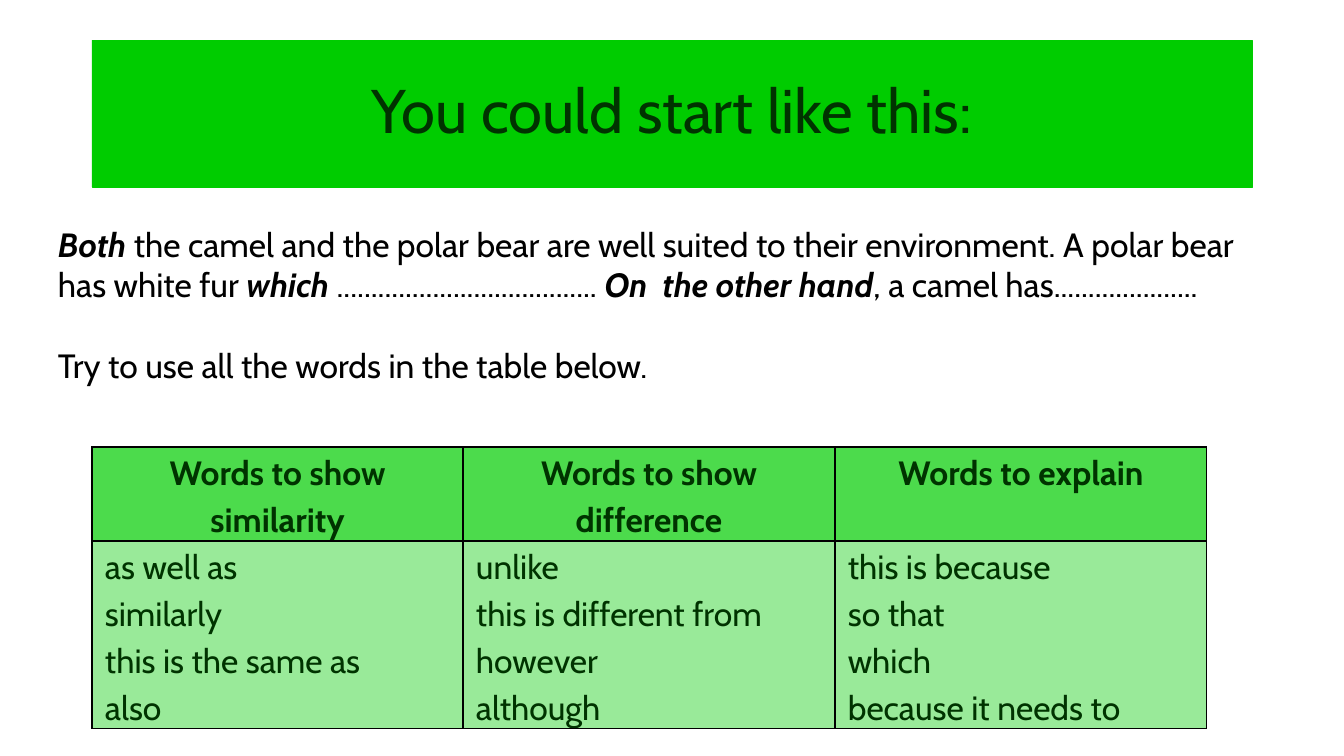
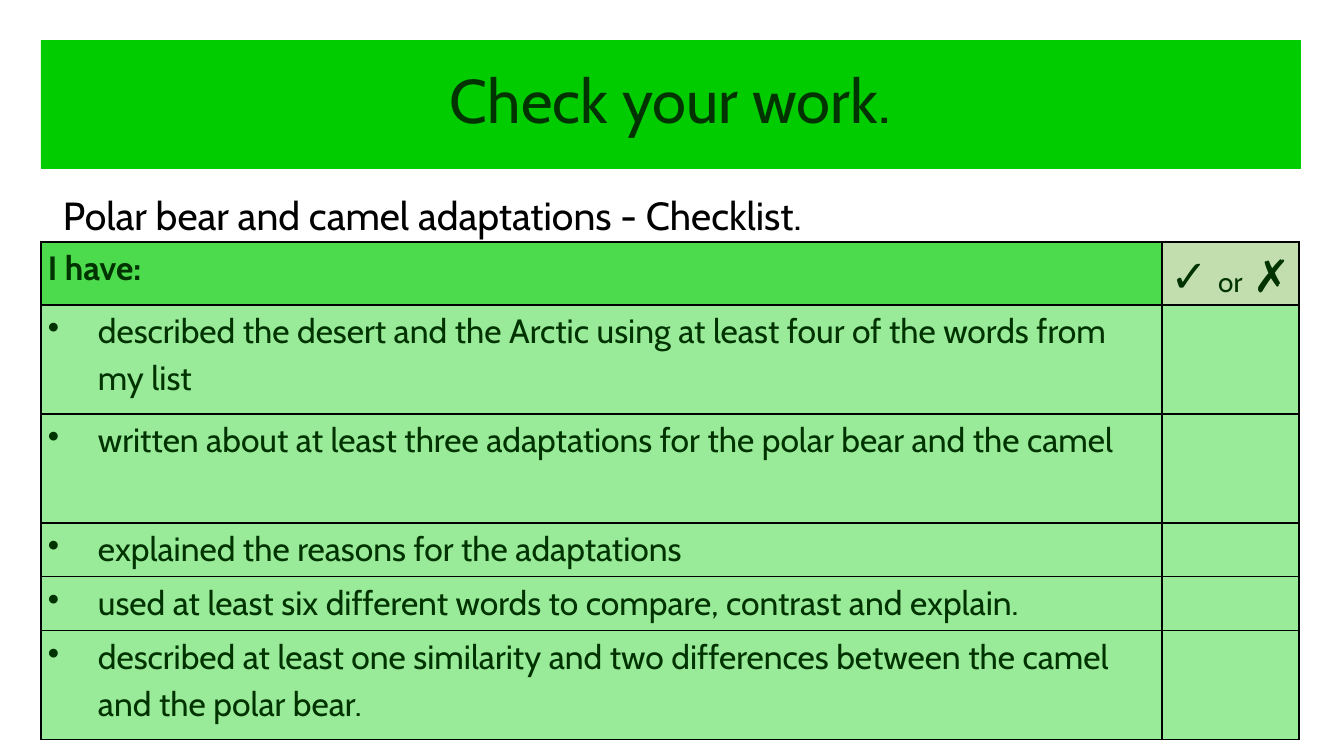
import pptx
import pptx.dml.color
import pptx.enum.text
import pptx.oxml
import pptx.oxml.ns
import pptx.util

# Shared scale, colours and text styles
PX = 914400 / 100.8
GREEN = pptx.dml.color.RGBColor(0x00, 0xCC, 0x00)
DARK_GREEN = pptx.dml.color.RGBColor(0x00, 0x33, 0x00)
SAGE = pptx.dml.color.RGBColor(0xA9, 0xD1, 0x8E)
BLACK = pptx.dml.color.RGBColor(0x00, 0x00, 0x00)
HEADER_ALPHA, BODY_ALPHA = 70, 40
CENTER = pptx.enum.text.PP_ALIGN.CENTER
LEFT = pptx.enum.text.PP_ALIGN.LEFT

TITLE = {"name": "Cabin", "size": pptx.util.Pt(44)}
BODY = {"name": "Cabin", "size": pptx.util.Pt(24), "bold": False}
HEADER = {**BODY, "bold": True}
KEYWORD = {**HEADER, "italic": True}
SUBTITLE = {**BODY, "size": pptx.util.Pt(28)}
MARK = {"name": "Calibri", "size": pptx.util.Pt(32), "bold": False}
SMALL = {**BODY, "size": pptx.util.Pt(20)}


def px(length):
    return pptx.util.Emu(round(length * PX))


def set_all(target, values):
    for name, value in values.items():
        setattr(target, name, value)


def write(paragraph, runs, color, **layout):
    """Fill a paragraph with (text, style) runs."""
    set_all(paragraph, layout)
    for text, style in runs:
        run = paragraph.add_run()
        run.text = text
        set_all(run.font, style)
        run.font.color.rgb = color


def write_all(frame, paragraphs, color, **layout):
    for number, runs in enumerate(paragraphs):
        paragraph = frame.add_paragraph() if number else frame.paragraphs[0]
        write(paragraph, runs, color, **layout)


def add_bullet(paragraph, indent):
    properties = paragraph._p.get_or_add_pPr()
    properties.set("marL", str(px(indent)))
    properties.set("indent", str(-px(indent)))
    properties.append(pptx.oxml.parse_xml(
        f'<a:buChar {pptx.oxml.ns.nsdecls("a")} char="•"/>'))


def title_band(slide, box, text):
    band = slide.shapes.title
    set_all(band, dict(zip(("left", "top", "width", "height"), map(px, box))))
    band.fill.solid()
    band.fill.fore_color.rgb = GREEN
    band.line.color.rgb = GREEN
    band.line.width = pptx.util.Pt(0.5)
    band.text_frame.vertical_anchor = pptx.enum.text.MSO_ANCHOR.MIDDLE
    write(band.text_frame.paragraphs[0], [(text, TITLE)], DARK_GREEN,
          alignment=CENTER, line_spacing=0.9)


def text_block(slide, box, paragraphs, wrap=True):
    frame = slide.shapes.add_textbox(*map(px, box)).text_frame
    frame.word_wrap = wrap
    write_all(frame, paragraphs, BLACK)
    return frame


def fill_cell(cell, color, alpha=None):
    cell.fill.solid()
    cell.fill.fore_color.rgb = color
    properties = cell._tc.get_or_add_tcPr()
    if alpha:
        rgb = properties.find(".//" + pptx.oxml.ns.qn("a:srgbClr"))
        rgb.append(pptx.oxml.parse_xml(
            f'<a:alpha {pptx.oxml.ns.nsdecls("a")} val="{alpha * 1000}"/>'))
    # Borders come before the fill
    for position, side in enumerate("LRTB"):
        properties.insert(position, pptx.oxml.parse_xml(
            f'<a:ln{side} {pptx.oxml.ns.nsdecls("a")} w="12700"><a:solidFill>'
            f'<a:srgbClr val="{BLACK}"/></a:solidFill></a:ln{side}>'))


def green_table(slide, left, top, widths, heights, rows, inset):
    """Place rows of cells, each cell a list of paragraphs; return the table."""
    table = slide.shapes.add_table(
        len(heights), len(widths),
        *map(px, (left, top, sum(widths), sum(heights)))).table
    table.first_row = table.horz_banding = False
    for column, width in zip(table.columns, widths):
        column.width = px(width)
    for row, height in zip(table.rows, heights):
        row.height = px(height)
    margins = {"margin_left": px(inset), "margin_right": px(inset),
               "margin_top": 0, "margin_bottom": 0}
    for r, row in enumerate(rows):
        for c, paragraphs in enumerate(row):
            cell = table.cell(r, c)
            set_all(cell, margins)
            write_all(cell.text_frame, paragraphs, DARK_GREEN,
                      alignment=LEFT, line_spacing=1.15)
            fill_cell(cell, GREEN, BODY_ALPHA if r else HEADER_ALPHA)
    return table


def starter_slide(slide):
    title_band(slide, (92, 40, 1160, 147), "You could start like this:")

    # Word bank
    word_bank = {
        "Words to show similarity":
            ["as well as", "similarly", "this is the same as", "also"],
        "Words to show difference":
            ["unlike", "this is different from", "however", "although"],
        "Words to explain":
            ["this is because", "so that", "which", "because it needs to"],
    }
    headings = [[[(heading, HEADER)]] for heading in word_bank]
    words = [[[(word, BODY)] for word in column]
             for column in word_bank.values()]
    table = green_table(slide, 92, 447, (371, 372, 372), (94, 187),
                        [headings, words], inset=13)
    for heading in table.rows[0].cells:
        heading.text_frame.paragraphs[0].alignment = CENTER

    # Opening sentences
    opening = [
        ("Both", KEYWORD),
        (" the camel and the polar bear are well suited to their environment."
         " A polar bear has white fur ", BODY),
        ("which ", KEYWORD),
        ("." * 38 + " ", BODY),
        ("On  the other hand", KEYWORD),
        (", a camel has" + "." * 21, BODY),
    ]
    instruction = [("Try to use all the words in the table below.", BODY)]
    frame = text_block(slide, (48, 219, 1229, 214), [opening, instruction])
    frame.paragraphs[1].space_before = pptx.util.Pt(29)


def checklist_slide(slide):
    title_band(slide, (41, 40, 1259, 128), "Check your work.")

    # Checklist with a column for marks
    goals = [
        "described the desert and the Arctic using at least four of the words"
        " from my list",
        "written about at least three adaptations for the polar bear and the"
        " camel",
        "explained the reasons for the adaptations",
        "used at least six different words to compare, contrast and explain.",
        "described at least one similarity and two differences between the"
        " camel and the polar bear.",
    ]
    heading = [[[("I have:", HEADER)]],
               [[("✓ ", MARK), ("or", SMALL), (" ✗", MARK)]]]
    rows = [heading] + [[[[(goal, BODY)]], []] for goal in goals]
    table = green_table(slide, 41, 242, (1121, 137),
                        (63, 109, 109, 54, 54, 109), rows, inset=7)
    for number in range(1, len(rows)):
        add_bullet(table.cell(number, 0).text_frame.paragraphs[0], 50)
    marks = table.cell(0, 1)
    marks.fill.solid()
    marks.fill.fore_color.rgb = SAGE
    marks.text_frame.paragraphs[0].alignment = CENTER

    # Checklist name
    text_block(slide, (53, 186, 809, 57),
               [[("Polar bear and camel adaptations - Checklist.", SUBTITLE)]],
               wrap=False)


def main():
    deck = pptx.Presentation()
    deck.slide_width, deck.slide_height = px(1344), px(756)
    title_only = deck.slide_layouts[5]
    for build in (starter_slide, checklist_slide):
        build(deck.slides.add_slide(title_only))
    deck.save("out.pptx")


if __name__ == "__main__":
    main()
